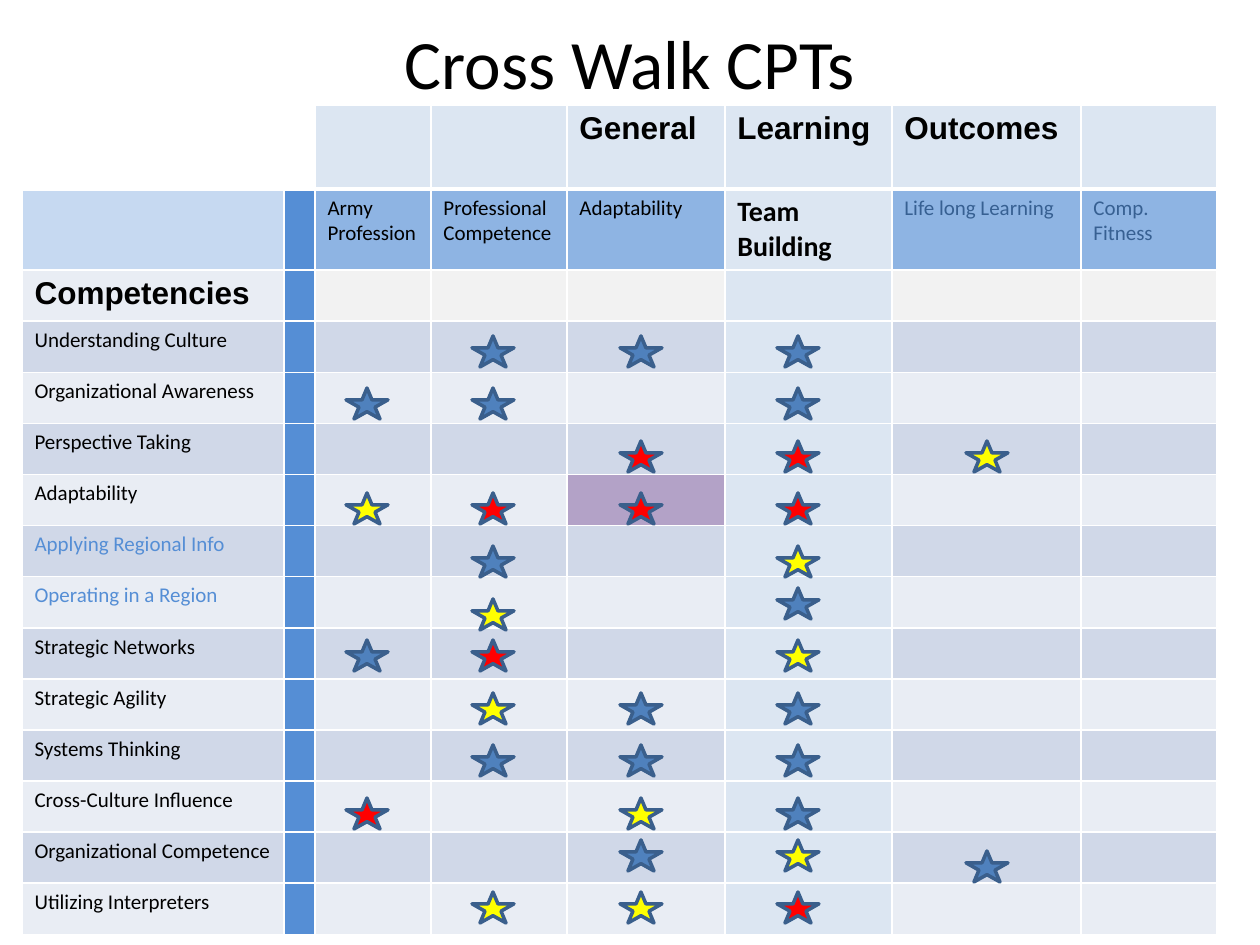
from lxml.etree import SubElement
from pptx import Presentation
from pptx.dml.color import RGBColor
from pptx.enum.shapes import MSO_SHAPE as Shape
from pptx.enum.text import MSO_ANCHOR as Anchor, MSO_AUTO_SIZE as AutoSize, PP_ALIGN as Align
from pptx.oxml.ns import qn
from pptx.util import Emu, Pt

BLACK = RGBColor(0x00, 0x00, 0x00)
WHITE = RGBColor(0xFF, 0xFF, 0xFF)
PALE_BLUE = RGBColor(0xDC, 0xE6, 0xF2)
CORNER_BLUE = RGBColor(0xC6, 0xD9, 0xF1)
HEADER_BLUE = RGBColor(0x8E, 0xB4, 0xE3)
DIVIDER_BLUE = RGBColor(0x55, 0x8E, 0xD5)
MUTED_BLUE = RGBColor(0x37, 0x60, 0x92)
LIGHT_GREY = RGBColor(0xF2, 0xF2, 0xF2)
BAND_DARK = RGBColor(0xD0, 0xD8, 0xE8)
BAND_LIGHT = RGBColor(0xE9, 0xED, 0xF4)
PURPLE = RGBColor(0xB3, 0xA2, 0xC7)
STAR_LINE = RGBColor(0x3A, 0x5F, 0x8C)
STAR_FILLS = {
    "B": RGBColor(0x4F, 0x81, 0xBD),
    "Y": RGBColor(0xFF, 0xFF, 0x00),
    "R": RGBColor(0xFF, 0x00, 0x00),
}

COLUMN_WIDTHS = [262, 31, 116, 136, 158, 167, 189, 136]
ROW_HEIGHTS = [84, 80] + [51] * 13
STAR_LEFTS = [346, 472, 620, 777, 966]
DIVIDER_COLUMN, ADAPTABILITY_COLUMN, TEAM_COLUMN = 1, 4, 5
FIRST_ROW = 3

BANNER = ["", "", "", "", "General", "Learning", "Outcomes", ""]
OUTCOMES = ["", "", "Army Profession", "Professional Competence", "Adaptability",
            "Team Building", "Life long Learning", "Comp.\nFitness"]
# One mark per outcome; a lower-case mark sits a little lower in its row.
COMPETENCIES = [
    ("Understanding Culture", ".BBB."),
    ("Organizational Awareness", "BB.B."),
    ("Perspective Taking", "..RRY"),
    ("Adaptability", "YRRR."),
    ("Applying Regional Info", ".B.Y."),
    ("Operating in a Region", ".y.B."),
    ("Strategic Networks", "BR.Y."),
    ("Strategic Agility", ".YBB."),
    ("Systems Thinking", ".BBB."),
    ("Cross-Culture Influence", "R.YB."),
    ("Organizational Competence", "..BYb"),
    ("Utilizing Interpreters", ".YYR."),
]
REGIONAL = {"Applying Regional Info", "Operating in a Region"}


def px(length):
    return Emu(round(length * 914400 / 126))


def set_font(para, size, name="Calibri", color=BLACK, bold=False):
    font = para.font
    font.size, font.name, font.bold = Pt(size), name, bold
    font.color.rgb = color


def add_title(page, text):
    title = page.shapes.title
    title.left, title.top, title.width, title.height = px(63), px(38), px(1134), px(47)
    frame = title.text_frame
    frame.text = text
    frame.auto_size = AutoSize.NONE
    frame.vertical_anchor = Anchor.MIDDLE
    para = frame.paragraphs[0]
    para.alignment = Align.CENTER
    set_font(para, 39.6)


def set_borders(cell, bottom):
    properties = cell._tc.get_or_add_tcPr()
    for side, width in (("L", 1), ("R", 1), ("T", 1), ("B", bottom)):
        line = SubElement(properties, qn(f"a:ln{side}"), w=str(Pt(width)))
        fill = SubElement(line, qn("a:solidFill"))
        SubElement(fill, qn("a:srgbClr"), val=str(WHITE))


def fill_color(row, column):
    if row == 0:
        return WHITE if column <= DIVIDER_COLUMN else PALE_BLUE
    if column == DIVIDER_COLUMN:
        return DIVIDER_BLUE
    if column == TEAM_COLUMN:
        return PALE_BLUE
    if row == 1:
        return HEADER_BLUE if column else CORNER_BLUE
    if row == 2:
        return LIGHT_GREY if column else BAND_LIGHT
    if column == ADAPTABILITY_COLUMN and COMPETENCIES[row - FIRST_ROW][0] == "Adaptability":
        return PURPLE
    return BAND_DARK if row % 2 else BAND_LIGHT


def text_style(row, column, text):
    if row in (0, 2):
        return {"size": 18, "name": "Arial", "bold": True}
    if row == 1 and column == TEAM_COLUMN:
        return {"size": 16, "bold": True}
    if row == 1 and column > TEAM_COLUMN:
        return {"size": 12, "color": MUTED_BLUE}
    return {"size": 12, "color": DIVIDER_BLUE if text in REGIONAL else BLACK}


def add_matrix(page):
    labels = ["Competencies"] + [name for name, marks in COMPETENCIES]
    rows = [BANNER, OUTCOMES] + [[label] + [""] * 7 for label in labels]
    table = page.shapes.add_table(len(rows), len(COLUMN_WIDTHS), px(22), px(105),
                                  px(sum(COLUMN_WIDTHS)), px(sum(ROW_HEIGHTS))).table
    for column, width in zip(table.columns, COLUMN_WIDTHS):
        column.width = px(width)
    for row, height in zip(table.rows, ROW_HEIGHTS):
        row.height = px(height)
    for r, texts in enumerate(rows):
        for c, text in enumerate(texts):
            cell = table.cell(r, c)
            set_borders(cell, 1 if r else 3)
            cell.fill.solid()
            cell.fill.fore_color.rgb = fill_color(r, c)
            if text:
                cell.text = text
                for para in cell.text_frame.paragraphs:
                    set_font(para, **text_style(r, c, text))


def add_star(page, left, top, color):
    star = page.shapes.add_shape(Shape.STAR_5_POINT, px(left), px(top), px(42), px(31))
    star.shadow.inherit = False
    star.fill.solid()
    star.fill.fore_color.rgb = color
    star.line.color.rgb = STAR_LINE
    star.line.width = Pt(2)


def add_stars(page):
    for index, (name, marks) in enumerate(COMPETENCIES):
        top = 336 + (105 * index - 21 * (index // 5)) // 2
        for left, mark in zip(STAR_LEFTS, marks):
            if mark != ".":
                add_star(page, left, top + 11 * mark.islower(), STAR_FILLS[mark.upper()])


def main():
    deck = Presentation()
    deck.slide_width, deck.slide_height = px(1260), px(945)
    page = deck.slides.add_slide(deck.slide_layouts[5])
    add_title(page, "Cross Walk CPTs")
    add_matrix(page)
    add_stars(page)
    deck.save("out.pptx")


if __name__ == "__main__":
    main()
